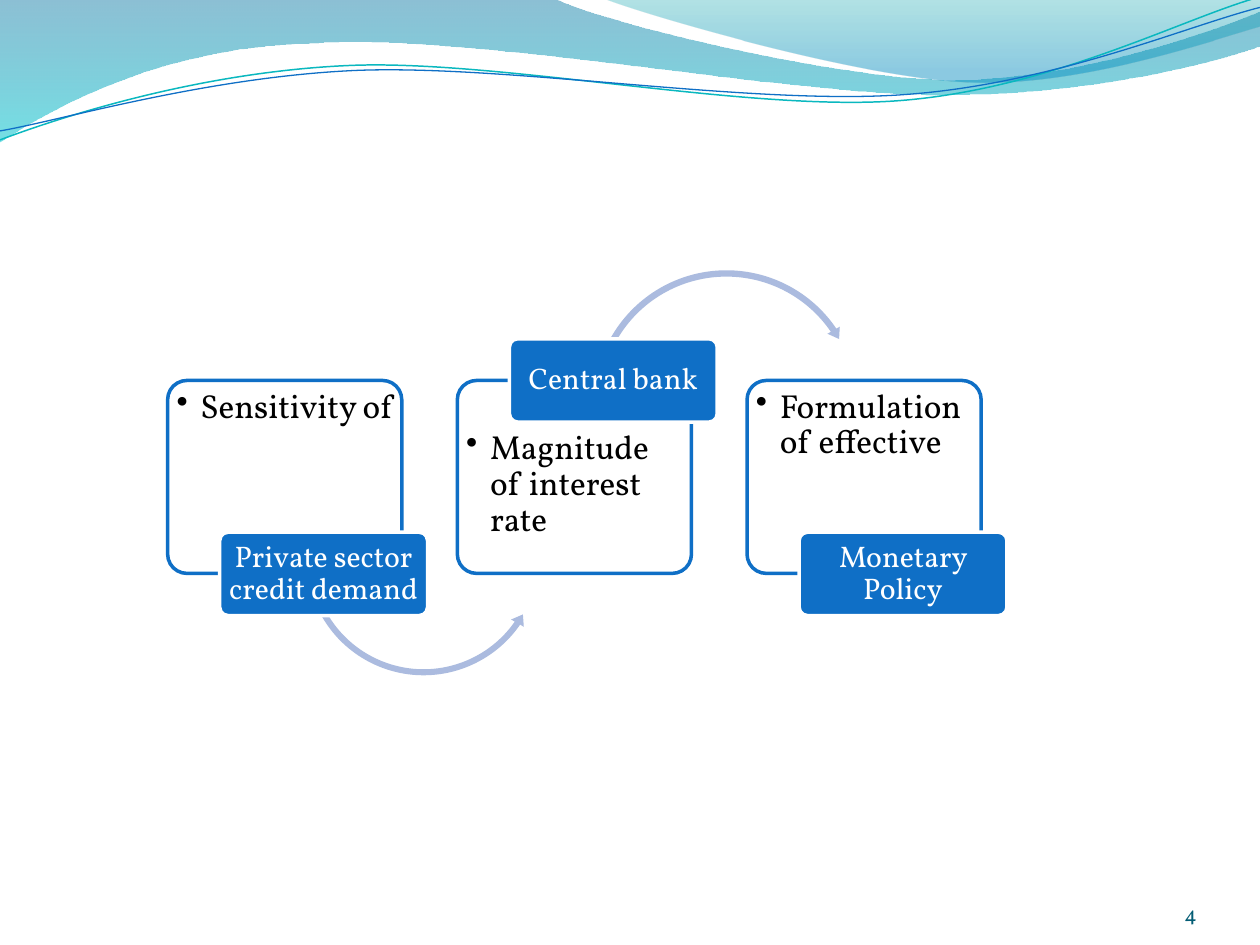
import math
from lxml import etree
from pptx import Presentation
from pptx import util as u
from pptx.dml.color import RGBColor
from pptx.enum import shapes, text
from pptx.oxml import ns

COLORS = {
    "blue": "0F6FC6", "teal": "0AB8BF", "arrow": "ABBBDF", "white": "FFFFFF",
    "black": "000000", "page": "045D75", "band_top": "0074A1",
    "band_end": "00C6CF", "corner_top": "00A1A9", "corner_end": "008BBF",
}
RGB = {name: RGBColor.from_string(value) for name, value in COLORS.items()}

BODY = {
    "frame": {"margin_left": 0.1, "margin_right": 0.1, "margin_top": 0.1, "margin_bottom": 0.1},
    "anchor": text.MSO_ANCHOR.TOP,
    "paragraph": {"level": 1, "line_spacing": 0.9, "alignment": text.PP_ALIGN.LEFT},
    "size": 19, "color": "black", "bullet": True,
}
TAG = {
    "frame": {"margin_left": 0.1, "margin_right": 0.1, "margin_top": 0.05, "margin_bottom": 0.05},
    "anchor": text.MSO_ANCHOR.MIDDLE,
    "paragraph": {"line_spacing": 0.9, "alignment": text.PP_ALIGN.CENTER},
    "size": 17, "color": "white", "bullet": False,
}
PAGE = {
    "frame": {"margin_left": 0, "margin_right": 0, "margin_top": 0, "margin_bottom": 0},
    "anchor": text.MSO_ANCHOR.BOTTOM,
    "paragraph": {"alignment": text.PP_ALIGN.RIGHT},
    "size": 12, "color": "page", "bullet": False,
}

deck = Presentation()
deck.slide_width, deck.slide_height = u.Cm(25.4), u.Cm(19.05)
slide = deck.slides.add_slide(deck.slide_layouts[6])


def add_label(wording, place, style):
    frame = slide.shapes.add_textbox(*map(u.Cm, place)).text_frame
    frame.word_wrap = True
    frame.vertical_anchor = style["anchor"]
    for name, value in style["frame"].items():
        setattr(frame, name, u.Cm(value))
    paragraph = frame.paragraphs[0]
    for name, value in style["paragraph"].items():
        setattr(paragraph, name, value)
    run = paragraph.add_run()
    run.text = wording
    run.font.name, run.font.size = "Vollkorn", u.Pt(style["size"])
    run.font.color.rgb = RGB[style["color"]]
    if style["bullet"]:
        props = paragraph._p.get_or_add_pPr()
        props.set("marL", str(u.Cm(0.48)))
        props.set("indent", str(u.Cm(-0.48)))
        etree.SubElement(props, ns.qn("a:buChar")).set("char", "••")


def add_shape(preset, place, adjustments, fill, line=None):
    shape = slide.shapes.add_shape(preset, *map(u.Cm, place))
    shape.shadow.inherit = False
    for index, value in enumerate(adjustments):
        shape.adjustments[index] = value
    shape.fill.solid()
    shape.fill.fore_color.rgb = RGB[fill]
    if line:
        shape.line.color.rgb, shape.line.width = RGB[line], u.Pt(2)
    else:
        shape.line.fill.background()
    return shape


waves = [
    {"start": (0, 0), "stops": [("band_top", 0, 45), ("band_end", 1, 55)], "segments": [
        (11.18, -0.03), (12.09, 0.43, 16.87, 1.6, 19.25, 1.6),
        (21.67, 1.6, 24.33, 0.66, 25.4, 0.23), (25.43, 0.91),
        (24.97, 1.12, 22.1, 1.93, 18.95, 1.91), (15.8, 1.91, 9.7, 0.71, 6.53, 0.86),
        (3.28, 0.91, 1.17, 2.11, -0.03, 2.87), (0, 0)]},
    {"start": (12.17, -0.03), "stops": [("corner_top", 0, 30), ("corner_end", 0.8, 45)], "segments": [
        (12.93, 0.28, 17.32, 1.57, 19.53, 1.65),
        (21.74, 1.75, 24.41, 0.81, 25.4, 0.53), (25.4, 0), (12.17, -0.03)]},
    {"start": (0, 2.82), "line": ("teal", 0.85), "center": (12.67, 1.46), "segments": [
        (1.22, 2.36, 4.01, 1.45, 7.04, 1.32), (10.03, 1.19, 15.06, 2.26, 18.11, 2.03),
        (21.16, 1.8, 23.83, 0.38, 25.35, -0.05)]},
    {"start": (0, 2.64), "line": ("blue", 0.75), "center": (12.69, 1.5), "segments": [
        (1.19, 2.44, 4.17, 1.55, 7.19, 1.42), (10.24, 1.3, 15.16, 2.13, 18.21, 1.91),
        (21.23, 1.7, 23.9, 0.53, 25.4, 0.15)]},
]
TILT = 2.7
for wave in waves:
    points = [wave["start"]]
    for segment in wave["segments"]:
        points += zip(segment[::2], segment[1::2])
    if "line" in wave:
        cx, cy = wave["center"]
        cos, sin = math.cos(math.radians(TILT)), math.sin(math.radians(TILT))
        points = [(cx + (x - cx) * cos - (y - cy) * sin, cy + (x - cx) * sin + (y - cy) * cos)
                  for x, y in points]
    points = [(u.Cm(x), u.Cm(y)) for x, y in points]
    builder = slide.shapes.build_freeform(*points[0])
    builder.add_line_segments(points[1:], close="stops" in wave)
    curve = builder.convert_to_shape()
    curve.shadow.inherit = False
    steps = iter(list(curve._element.iter(ns.qn("a:lnTo"))))
    for segment in wave["segments"]:
        controls = [next(steps) for _ in segment[::2]]
        if len(controls) == 3:
            bend = etree.Element(ns.qn("a:cubicBezTo"))
            controls[0].addprevious(bend)
            for control in controls:
                bend.append(control[0])
                control.getparent().remove(control)
    if "line" in wave:
        color, width = wave["line"]
        curve.fill.background()
        curve.line.color.rgb, curve.line.width = RGB[color], u.Pt(width)
        curve.rotation = 360 - TILT
        continue
    curve.line.fill.background()
    curve.fill.gradient()
    curve.fill.gradient_angle = 270
    for stop, (color, position, _) in zip(curve.fill.gradient_stops, wave["stops"]):
        stop.color.rgb, stop.position = RGB[color], position
    tints = curve.fill._xPr.iter(ns.qn("a:srgbClr"))
    for tint, (_, _, opacity) in zip(list(tints), wave["stops"]):
        etree.SubElement(tint, ns.qn("a:alpha")).set("val", str(opacity * 1000))

ROUNDED = shapes.MSO_SHAPE.ROUNDED_RECTANGLE
stages = [
    ("Sensitivity of", "Private sector credit demand", 7.75, 10.73,
     (shapes.MSO_SHAPE.LEFT_CIRCULAR_ARROW, (6.09, 8.8, 4.9, 4.9), (0.025, 3.094, 20.849, 90.245, 0.03))),
    ("Magnitude of interest rate", "Central bank", 8.59, 6.83,
     (shapes.MSO_SHAPE.CIRCULAR_ARROW, (11.89, 5.37, 5.51, 5.51), (0.023, 2.738, 195.507, 125.755, 0.026))),
    ("Formulation of effective", "Monetary Policy", 7.75, 10.73, None),
]
for column, (finding, actor, finding_top, actor_top, arrow) in enumerate(stages):
    left = 3.38 + 5.84 * column
    card = add_shape(ROUNDED, (left, 7.67, 4.72, 3.89), [0.1], "white", "blue")
    tint = next(card.fill._xPr.iter(ns.qn("a:srgbClr")))
    etree.SubElement(tint, ns.qn("a:alpha")).set("val", "90000")
    add_label(finding, (left + 0.08, finding_top, 4.55, 2.87), BODY)
    if arrow:
        add_shape(*arrow, "arrow")
    add_shape(ROUNDED, (left + 1.05, actor_top, 4.19, 1.68), [0.1], "blue", "white")
    add_label(actor, (left + 1.1, actor_top + 0.05, 4.09, 1.57), TAG)

add_label("4", (22.02, 17.65, 2.11, 1.02), PAGE)

deck.save("out.pptx")
